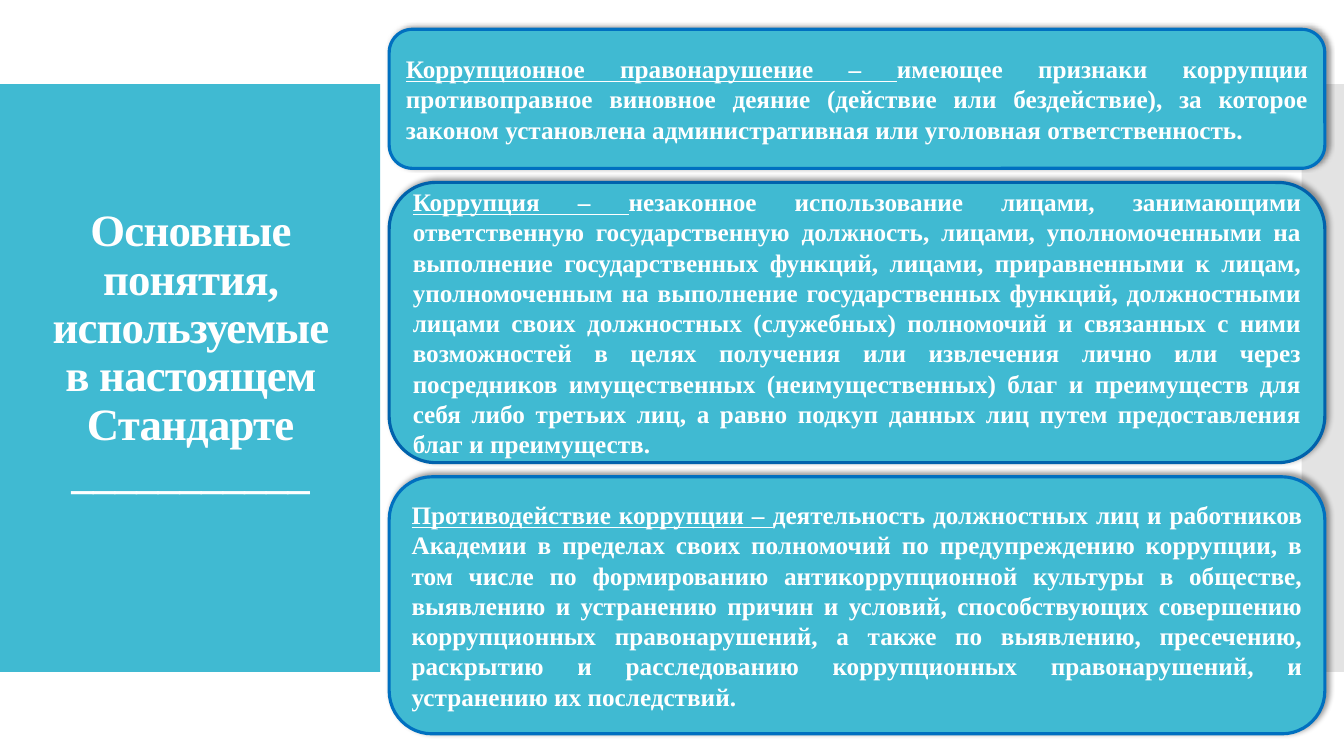
from pptx import Presentation
from pptx.dml.color import RGBColor
from pptx.enum.shapes import MSO_SHAPE
from pptx.enum.text import MSO_ANCHOR, PP_ALIGN
from pptx.oxml.ns import qn
from pptx.util import Inches, Pt
from lxml.etree import SubElement

TITLE = ["Основные понятия, используемые в настоящем Стандарте", "___________"]
DEFINITIONS = [
    ("Коррупционное правонарушение – ",
     "имеющее признаки коррупции противоправное виновное деяние (действие или бездействие), "
     "за которое законом установлена административная или уголовная ответственность."),
    ("Коррупция – ",
     "незаконное использование лицами, занимающими ответственную государственную должность, "
     "лицами, уполномоченными на выполнение государственных функций, лицами, приравненными "
     "к лицам, уполномоченным на выполнение государственных функций, должностными лицами своих "
     "должностных (служебных) полномочий и связанных с ними возможностей в целях получения или "
     "извлечения лично или через посредников имущественных (неимущественных) благ и преимуществ "
     "для себя либо третьих лиц, а равно подкуп данных лиц путем предоставления благ и преимуществ."),
    ("Противодействие коррупции – ",
     "деятельность должностных лиц и работников Академии в пределах своих полномочий по "
     "предупреждению коррупции, в том числе по формированию антикоррупционной культуры в обществе, "
     "выявлению и устранению причин и условий, способствующих совершению коррупционных "
     "правонарушений, а также по выявлению, пресечению, раскрытию и расследованию коррупционных "
     "правонарушений, и устранению их последствий."),
]

WHITE = RGBColor(0xFF, 0xFF, 0xFF)
TEAL = RGBColor(0x40, 0xBA, 0xD2)
GREY = RGBColor(0xC8, 0xC8, 0xC8)
BLUE = RGBColor(0x00, 0x70, 0xC0)
DARK_BLUE = RGBColor(0x00, 0x62, 0xAC)

WIDTH, HEIGHT = 13.33, 7.5
BAND_TOP = HEIGHT / 9
BAND_HEIGHT = HEIGHT - 2 * BAND_TOP
PANEL_WIDTH, STRIP_WIDTH = 3.77, 0.42
CARD_LEFT, CARD_TOP, CARD_WIDTH, CARD_GAP = 3.86, 0.29, 9.28, 0.14
CARD_HEIGHTS = [1.38, 2.78, 2.55]
CARD_LINES = [BLUE, DARK_BLUE, BLUE]


def add_block(page, kind, left, top, width, height, fill):
    block = page.shapes.add_shape(kind, Inches(left), Inches(top), Inches(width), Inches(height))
    block.shadow.inherit = False
    block.fill.solid()
    block.fill.fore_color.rgb = fill
    block.line.fill.background()
    return block


def add_span(para, text, size=18, underline=False, spacing=None):
    span = para.add_run()
    span.text = text
    span.font.name = "Times New Roman"
    span.font.size = Pt(size)
    span.font.bold = True
    span.font.underline = underline
    span.font.color.rgb = WHITE
    if spacing is not None:
        span.font._element.set("spc", str(round(spacing * 100)))


def add_shadow(block):
    effects = block._element.spPr.find(qn("a:effectLst"))
    shadow = SubElement(effects, qn("a:outerShdw"), blurRad=str(Pt(4)), dist=str(Pt(3)),
                        dir=str(315 * 60000), algn="bl", rotWithShape="0")
    color = SubElement(shadow, qn("a:srgbClr"), val="000000")
    SubElement(color, qn("a:alpha"), val="40000")


def add_title(page):
    box = page.shapes.add_textbox(Inches(0.28), Inches(1.23), Inches(3.22), Inches(5.03))
    frame = box.text_frame
    frame.word_wrap = True
    frame.vertical_anchor = MSO_ANCHOR.MIDDLE
    frame.margin_bottom = Inches(0.53)
    for index, line in enumerate(TITLE):
        para = frame.add_paragraph() if index else frame.paragraphs[0]
        para.alignment = PP_ALIGN.CENTER
        para.line_spacing = 0.9
        add_span(para, line, size=32, spacing=-0.6)


def add_card(page, top, height, line, term, meaning):
    card = add_block(page, MSO_SHAPE.FLOWCHART_ALTERNATE_PROCESS,
                     CARD_LEFT, top, CARD_WIDTH, height, TEAL)
    card.line.color.rgb = line
    card.line.width = Pt(2.25)
    add_shadow(card)
    card.text_frame.word_wrap = True
    card.text_frame.vertical_anchor = MSO_ANCHOR.MIDDLE
    para = card.text_frame.paragraphs[0]
    para.alignment = PP_ALIGN.JUSTIFY
    add_span(para, term, underline=True)
    add_span(para, meaning)


def main():
    deck = Presentation()
    deck.slide_width, deck.slide_height = Inches(WIDTH), Inches(HEIGHT)
    page = deck.slides.add_slide(deck.slide_layouts[6])

    add_block(page, MSO_SHAPE.RECTANGLE, 0, BAND_TOP, PANEL_WIDTH, BAND_HEIGHT, TEAL)
    strip = add_block(page, MSO_SHAPE.RECTANGLE, WIDTH - STRIP_WIDTH, BAND_TOP,
                      STRIP_WIDTH, BAND_HEIGHT, GREY)
    strip_color = strip._element.spPr.find(qn("a:solidFill")).find(qn("a:srgbClr"))
    SubElement(strip_color, qn("a:alpha"), val="50000")
    add_title(page)

    top = CARD_TOP
    for height, line, (term, meaning) in zip(CARD_HEIGHTS, CARD_LINES, DEFINITIONS):
        add_card(page, top, height, line, term, meaning)
        top += height + CARD_GAP

    deck.save("out.pptx")


if __name__ == "__main__":
    main()
